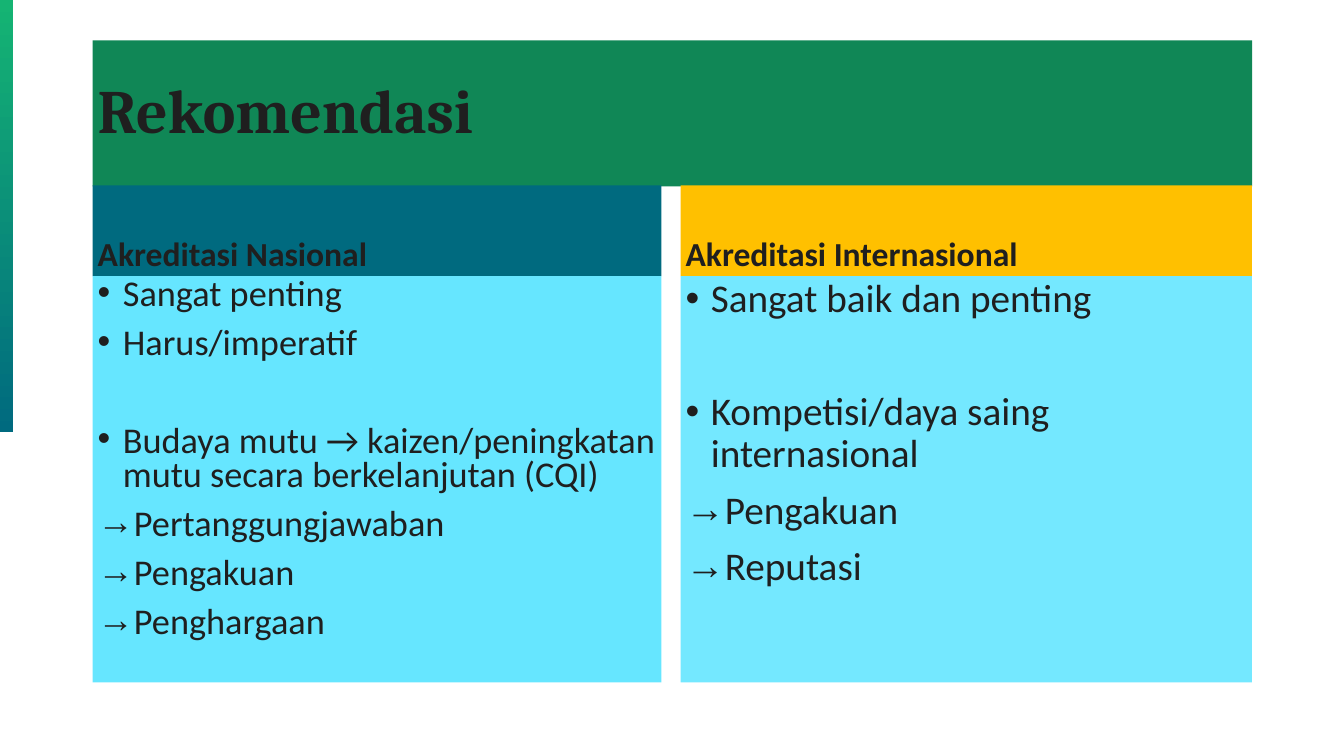
from lxml import etree
from pptx import Presentation
from pptx.dml.color import RGBColor
from pptx.enum.shapes import MSO_SHAPE
from pptx.enum.text import MSO_ANCHOR, PP_ALIGN
from pptx.oxml.ns import qn
from pptx.util import Inches, Pt

RECTANGLE = MSO_SHAPE.RECTANGLE
TOP, MIDDLE, BOTTOM = MSO_ANCHOR.TOP, MSO_ANCHOR.MIDDLE, MSO_ANCHOR.BOTTOM
LEFT = PP_ALIGN.LEFT
INDENT = Inches(0.5)

deck = Presentation()
deck.slide_width, deck.slide_height = Inches(26.66), Inches(15)
page = deck.slides.add_slide(deck.slide_layouts[6])


def color(value):
    return RGBColor.from_string(value)


def add_panel(left, top, width, height, fill, anchor=TOP, lines=(), spacing=0.9, **font):
    box = page.shapes.add_shape(
        RECTANGLE,
        int(deck.slide_width * left / 100), int(deck.slide_height * top / 100),
        int(deck.slide_width * width / 100), int(deck.slide_height * height / 100),
    )
    box.shadow.inherit = False
    box.line.fill.background()
    box.fill.solid()
    box.fill.fore_color.rgb = color(fill)
    frame = box.text_frame
    frame.word_wrap = True
    frame.vertical_anchor = anchor
    for index, (bullet, text, before) in enumerate(lines):
        para = frame.add_paragraph() if index else frame.paragraphs[0]
        layout = {"alignment": LEFT, "line_spacing": spacing, "space_before": Pt(before)}
        for name, value in layout.items():
            setattr(para, name, value)
        span = para.add_run()
        span.text = text
        for name, value in font.items():
            setattr(span.font, name, value)
        span.font.color.rgb = color("1F1F1F")
        if bullet:
            properties = para._p.get_or_add_pPr()
            properties.set("marL", str(INDENT))
            properties.set("indent", str(-INDENT))
            etree.SubElement(properties, qn("a:buFont"), typeface="Arial")
            etree.SubElement(properties, qn("a:buChar"), char=bullet)
    return box


accent = add_panel(0, 0, 0.98, 57.2, "15B473")
accent.fill.gradient()
accent.fill.gradient_angle = 270
for stop, (position, value) in zip(accent.fill.gradient_stops, [(0, "15B473"), (1, "006A7F")]):
    stop.position = position
    stop.color.rgb = color(value)

add_panel(6.9, 5.33, 86.27, 19.33, "108756", MIDDLE, [("", "Rekomendasi", 0)],
          name="Cambria", size=Pt(88), bold=True)

columns = [
    (6.9, 42.31, "Akreditasi Nasional", "006A7F", "66E6FF", 51.8, 0.8, [
        ("•", "Sangat penting", 20),
        ("•", "Harus/imperatif", 20),
        ("•", "Budaya mutu → kaizen/peningkatan mutu secara berkelanjutan (CQI)", 90),
        ("→", "Pertanggungjawaban", 20),
        ("→", "Pengakuan", 20),
        ("→", "Penghargaan", 20),
    ]),
    (50.64, 42.5, "Akreditasi Internasional", "FFC000", "74E8FF", 56, 0.9, [
        ("•", "Sangat baik dan penting", 20),
        ("•", "Kompetisi/daya saing internasional", 101),
        ("→", "Pengakuan", 20),
        ("→", "Reputasi", 20),
    ]),
]
for left, width, heading, heading_fill, body_fill, size, spacing, points in columns:
    add_panel(left, 24.53, width, 12, heading_fill, BOTTOM, [("", heading, 20)],
              name="Calibri", size=Pt(48), bold=True)
    add_panel(left, 36.53, width, 53.73, body_fill, TOP, points, spacing,
              name="Calibri", size=Pt(size))

deck.save("out.pptx")
